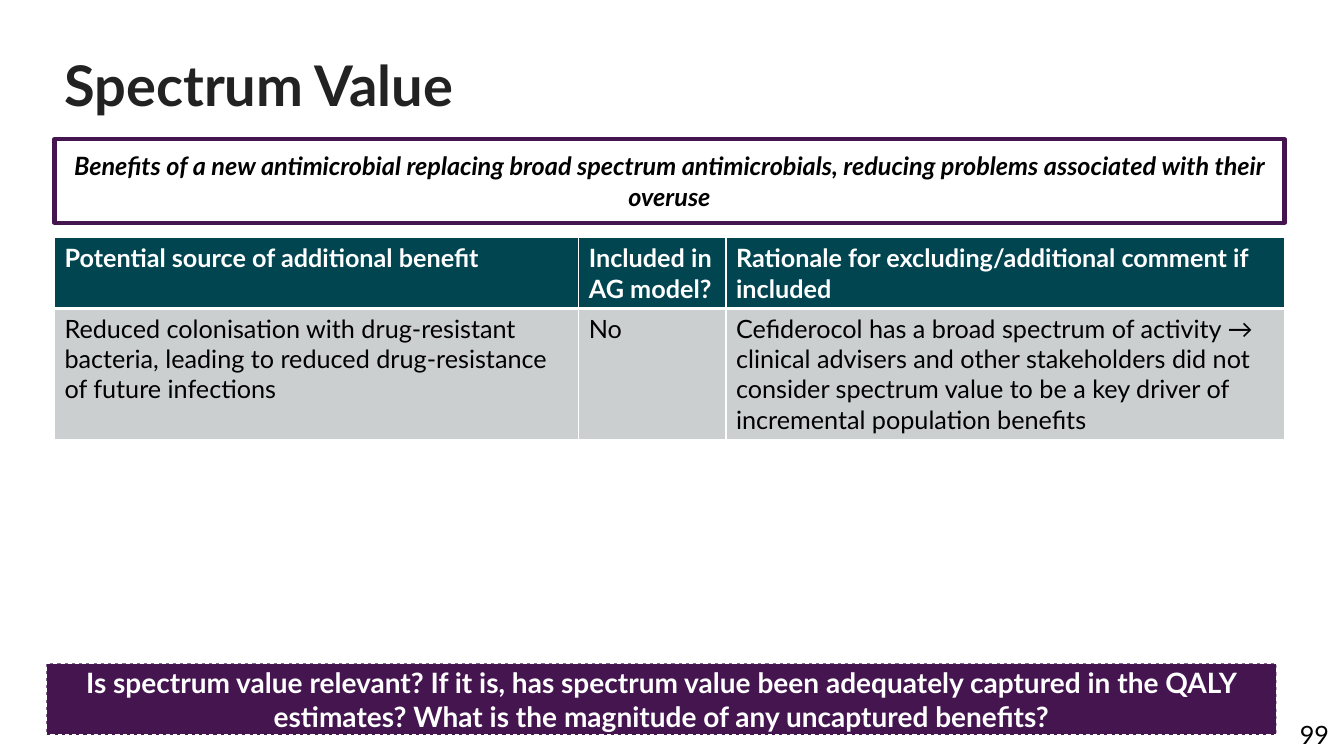
from lxml import etree
from pptx import Presentation
from pptx.dml.color import RGBColor
from pptx.enum import dml, shapes, text
from pptx.oxml import ns
from pptx.util import Inches, Pt

WHITE = RGBColor(0xFF, 0xFF, 0xFF)
BLACK = RGBColor(0, 0, 0)
CHARCOAL = RGBColor(0x22, 0x22, 0x22)
TEAL = RGBColor(0x00, 0x45, 0x50)
GREY = RGBColor(0xCC, 0xCF, 0xD0)
PURPLE = RGBColor(0x45, 0x15, 0x50)

LEFT, WIDTH = 0.54, 12.2
COLUMN_WIDTHS = (5.2, 1.46, 5.54)
ROW_HEIGHTS = (0.7, 1.3)
BENEFIT_ROWS = (
    ("Potential source of additional benefit",
     "Included in AG model?",
     "Rationale for excluding/additional comment if included"),
    ("Reduced colonisation with drug-resistant bacteria, leading to reduced "
     "drug-resistance of future infections",
     "No",
     "Cefiderocol has a broad spectrum of activity → clinical advisers and other "
     "stakeholders did not consider spectrum value to be a key driver of "
     "incremental population benefits"),
)


def write_text(frame, wording, color, align=text.PP_ALIGN.LEFT, **font_format):
    frame.word_wrap = True
    paragraph = frame.paragraphs[0]
    paragraph.alignment = align
    run = paragraph.add_run()
    run.text = wording
    run.font.color.rgb = color
    for name, value in {"name": "Lato", "size": Pt(18), **font_format}.items():
        setattr(run.font, name, value)
    return paragraph


def add_label(slide, box, wording, color, **text_format):
    label = slide.shapes.add_textbox(*map(Inches, box))
    return write_text(label.text_frame, wording, color, **text_format)


def add_banner(slide, box, wording, color, fill, line, line_width, **font_format):
    banner = slide.shapes.add_shape(shapes.MSO_SHAPE.RECTANGLE, *map(Inches, box))
    banner.shadow.inherit = False
    if fill is None:
        banner.fill.background()
    else:
        banner.fill.solid()
        banner.fill.fore_color.rgb = fill
    banner.line.color.rgb = line
    banner.line.width = Pt(line_width)
    banner.text_frame.vertical_anchor = text.MSO_ANCHOR.MIDDLE
    write_text(banner.text_frame, wording, color, text.PP_ALIGN.CENTER, bold=True, **font_format)
    return banner


def set_borders(cell, widths):
    """Draw white cell borders; widths maps L, R, T and B to points."""
    properties = cell._tc.get_or_add_tcPr()
    for index, (side, width) in enumerate(widths.items()):
        border = etree.Element(ns.qn(f"a:ln{side}"), w=str(Pt(width)))
        fill = etree.SubElement(border, ns.qn("a:solidFill"))
        etree.SubElement(fill, ns.qn("a:srgbClr"), val=str(WHITE))
        properties.insert(index, border)


def add_benefit_table(slide):
    box = (LEFT, 2.36, WIDTH, sum(ROW_HEIGHTS))
    frame = slide.shapes.add_table(len(ROW_HEIGHTS), len(COLUMN_WIDTHS), *map(Inches, box))
    table = frame.table
    for column, width in zip(table.columns, COLUMN_WIDTHS):
        column.width = Inches(width)
    for index, (row, height) in enumerate(zip(table.rows, ROW_HEIGHTS)):
        row.height = Inches(height)
        is_header = index == 0
        for cell, wording in zip(row.cells, BENEFIT_ROWS[index]):
            cell.fill.solid()
            cell.fill.fore_color.rgb = TEAL if is_header else GREY
            write_text(cell.text_frame, wording, WHITE if is_header else BLACK, bold=is_header)
            top, bottom = (1, 3) if is_header else (3, 1)
            set_borders(cell, {"L": 1, "R": 1, "T": top, "B": bottom})


def main():
    presentation = Presentation()
    presentation.slide_width = Inches(13.33)
    presentation.slide_height = Inches(7.5)
    slide = presentation.slides.add_slide(presentation.slide_layouts[6])

    add_label(slide, (11.44, 7.09, 1.84, 0.4), "99", BLACK, align=text.PP_ALIGN.RIGHT)
    title = add_label(slide, (LEFT, 0.53, 12.12, 1.4), "Spectrum Value", CHARCOAL,
                      size=Pt(40), bold=True)
    title.line_spacing = 0.9
    add_benefit_table(slide)
    add_banner(slide, (LEFT, 1.38, WIDTH, 0.83),
               "Benefits of a new antimicrobial replacing broad spectrum antimicrobials, "
               "reducing problems associated with their overuse",
               BLACK, None, PURPLE, 3, italic=True)
    question = add_banner(slide, (0.46, 6.58, WIDTH, 0.71),
                          "Is spectrum value relevant? If it is, has spectrum value been "
                          "adequately captured in the QALY estimates? What is the magnitude "
                          "of any uncaptured benefits?",
                          WHITE, PURPLE, WHITE, 0.75, size=Pt(20))
    question.line.dash_style = dml.MSO_LINE.DASH

    presentation.save("out.pptx")


if __name__ == "__main__":
    main()
